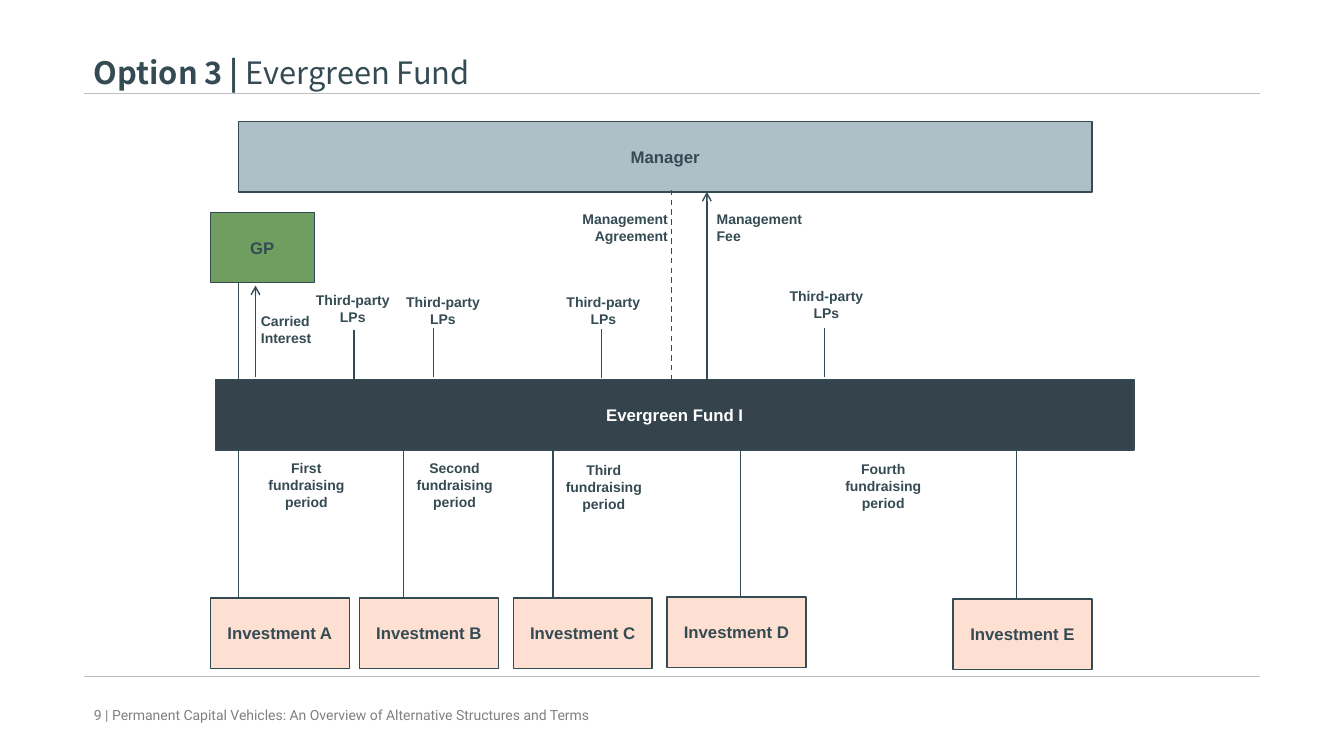
from lxml import etree
from pptx import Presentation
from pptx import util as u
from pptx.dml.color import RGBColor
from pptx.enum import dml, shapes, text
from pptx.oxml import ns


def rgb(value):
    return RGBColor.from_string(value)


class Diagram:
    INK, RULE, GREY, WHITE = "354B54", "BFBFBF", "808080", "FFFFFF"
    SLATE, MIST, GREEN, PEACH = "35444C", "AFBFC7", "709E61", "FDE0D1"
    FONT = "Arial"
    LEFT, CENTER, RIGHT = text.PP_ALIGN.LEFT, text.PP_ALIGN.CENTER, text.PP_ALIGN.RIGHT

    def __init__(self, slide):
        self.s = slide

    def style(self, font, size, color, name=FONT, bold=True):
        font.size, font.name, font.bold = u.Pt(size), name, bold
        font.color.rgb = rgb(color)

    def box(self, label, x, y, w, h, fill, color=INK):
        sp = self.s.shapes.add_shape(
            shapes.MSO_SHAPE.RECTANGLE, u.Pt(x), u.Pt(y), u.Pt(w), u.Pt(h))
        sp.shadow.inherit = False
        sp.fill.solid()
        sp.fill.fore_color.rgb = rgb(fill)
        sp.line.color.rgb = rgb(self.INK)
        sp.line.width = u.Pt(1)
        tf = sp.text_frame
        tf.vertical_anchor = text.MSO_ANCHOR.MIDDLE
        p = tf.paragraphs[0]
        p.text, p.alignment = label, self.CENTER
        self.style(p.font, 12, color)

    def frame(self, x, y, w, h, anchor):
        tf = self.s.shapes.add_textbox(u.Pt(x), u.Pt(y), u.Pt(w), u.Pt(h)).text_frame
        tf.word_wrap, tf.vertical_anchor = True, anchor
        return tf

    def label(self, words, x, y, w, h=31.5, align=CENTER):
        p = self.frame(x, y, w, h, text.MSO_ANCHOR.TOP).paragraphs[0]
        p.text, p.alignment = words, align
        self.style(p.font, 10, self.INK)

    def title(self, lead, rest, x, y, w, h):
        tf = self.frame(x, y, w, h, text.MSO_ANCHOR.MIDDLE)
        tf.margin_top = tf.margin_bottom = 0
        for words, bold in ((lead, True), (rest, False)):
            r = tf.paragraphs[0].add_run()
            r.text = words
            self.style(r.font, 22, self.INK, "Noto Sans CJK JP", bold)

    def footer(self, words, x, y, w, h):
        p = self.frame(x, y, w, h, text.MSO_ANCHOR.MIDDLE).paragraphs[0]
        p.text = words
        self.style(p.font, 10, self.GREY, "Roboto", False)

    def line(self, x1, y1, x2, y2, color=INK, width=1, arrow=False, dash=False):
        c = self.s.shapes.add_connector(
            shapes.MSO_CONNECTOR.STRAIGHT, u.Pt(x1), u.Pt(y1), u.Pt(x2), u.Pt(y2))
        c.line.color.rgb = rgb(color)
        c.line.width = u.Pt(width)
        if dash:
            c.line.dash_style = dml.MSO_LINE.DASH
        if arrow:
            etree.SubElement(c.line._get_or_add_ln(), ns.qn("a:tailEnd"), type="arrow")
        etree.SubElement(c._element.spPr, ns.qn("a:effectLst"))


def main():
    prs = Presentation()
    prs.slide_width, prs.slide_height = u.Pt(960), u.Pt(540)
    d = Diagram(prs.slides.add_slide(prs.slide_layouts[6]))

    # Title, rules and footer
    d.line(60, 67, 900, 67, d.RULE)
    d.line(60, 483.3, 900, 483.3, d.RULE, 0.75)
    d.title("Option 3 | ", "Evergreen Fund", 60, 34.5, 840, 34)
    d.footer("9 | Permanent Capital Vehicles: An Overview of Alternative Structures and Terms",
             60, 496, 438.5, 29)

    # Manager, general partner and fund
    fund_top, fund_bottom, box_h = 271.2, 321.6, 50.4
    d.box("Manager", 170.3, 86.7, 609.8, box_h, d.MIST)
    d.box("GP", 150.3, 151.6, 74.2, box_h, d.GREEN)
    d.box("Evergreen Fund I", 154, fund_top, 656, box_h, d.SLATE, d.WHITE)

    # Fees, agreement and carried interest
    d.line(170.3, fund_top, 170.3, 202)
    d.line(182.5, 269.3, 182.5, 204, arrow=True)
    d.line(504.9, fund_top, 504.9, 137.1, arrow=True)
    d.line(479.6, 135.6, 479.6, fund_top, dash=True)
    d.label("Carried Interest", 179.3, 219.5, 73.4, align=d.LEFT)
    d.label("Management Agreement", 403.4, 146.7, 80.6, align=d.RIGHT)
    d.label("Management Fee", 504.9, 146.7, 83.5, align=d.LEFT)

    # Third-party LPs: label left, top, width, then line x, top, bottom
    for x, y, w, line_x, top, bottom in (
            (216, 205, 72, 253, 235.6, fund_top),
            (278.6, 206, 75.6, 309.6, 234, 269.3),
            (393.1, 206, 75.6, 429.8, 234.7, 270),
            (556.4, 201.6, 67.7, 588.8, 234, 269.3)):
        d.label("Third-party LPs", x, y, w)
        d.line(line_x, top, line_x, bottom)

    # Fundraising periods
    for name, x, y, w in (("First", 183.8, 325, 70), ("Second", 288.7, 325, 72),
                          ("Third", 395.3, 326, 72), ("Fourth", 594.9, 325.5, 72)):
        d.label(f"{name} fundraising period", x, y, w, 44)

    # Investments: box left, box top, line x
    for name, x, y, line_x in (("A", 150.3, 427.1, 170.2), ("B", 256.8, 427.1, 288.2),
                               ("C", 366.7, 427.1, 395), ("D", 476.5, 426.4, 529),
                               ("E", 680.8, 427.9, 726)):
        d.line(line_x, y, line_x, fund_bottom)
        d.box(f"Investment {name}", x, y, 99.2, box_h, d.PEACH)

    prs.save("out.pptx")


if __name__ == "__main__":
    main()
